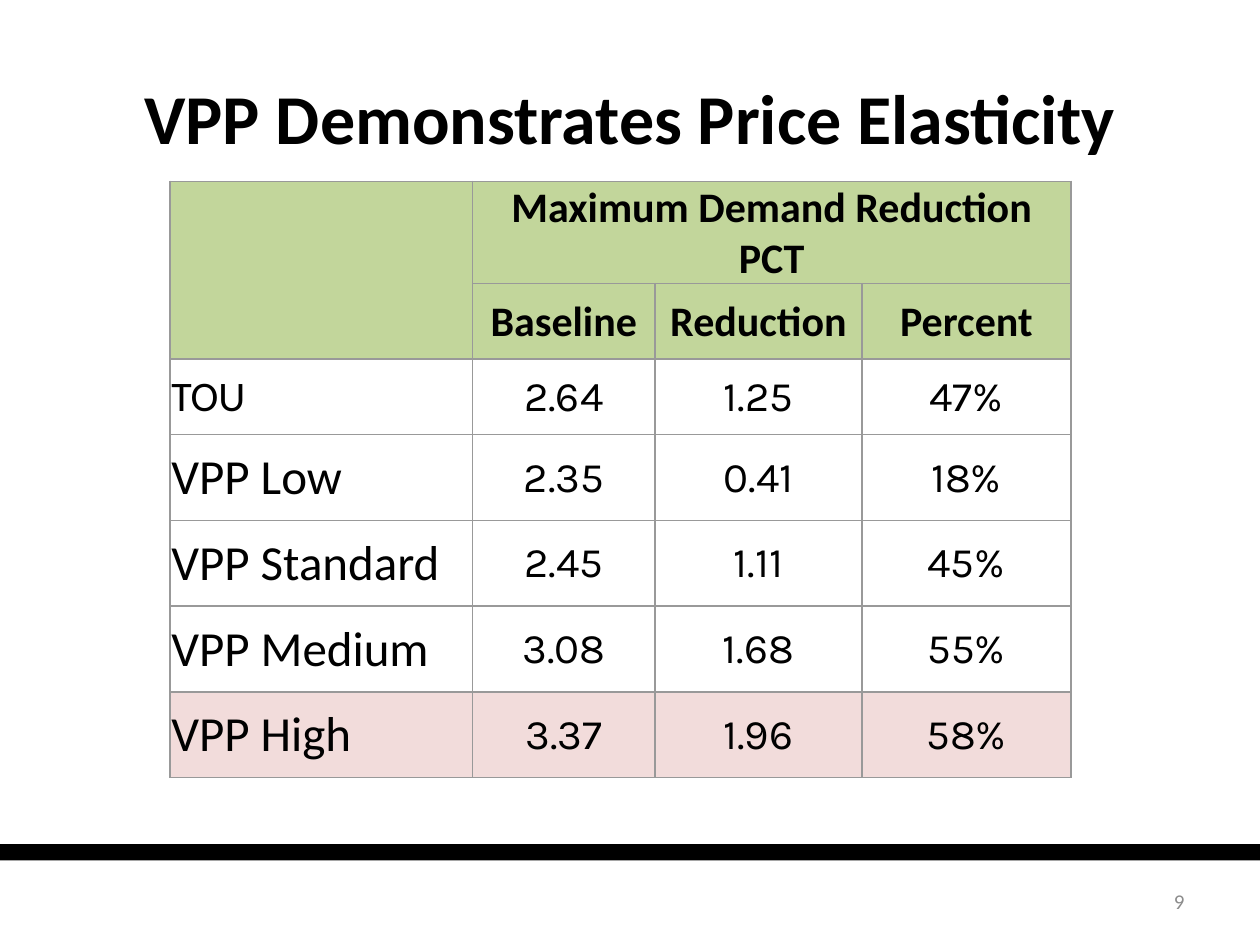
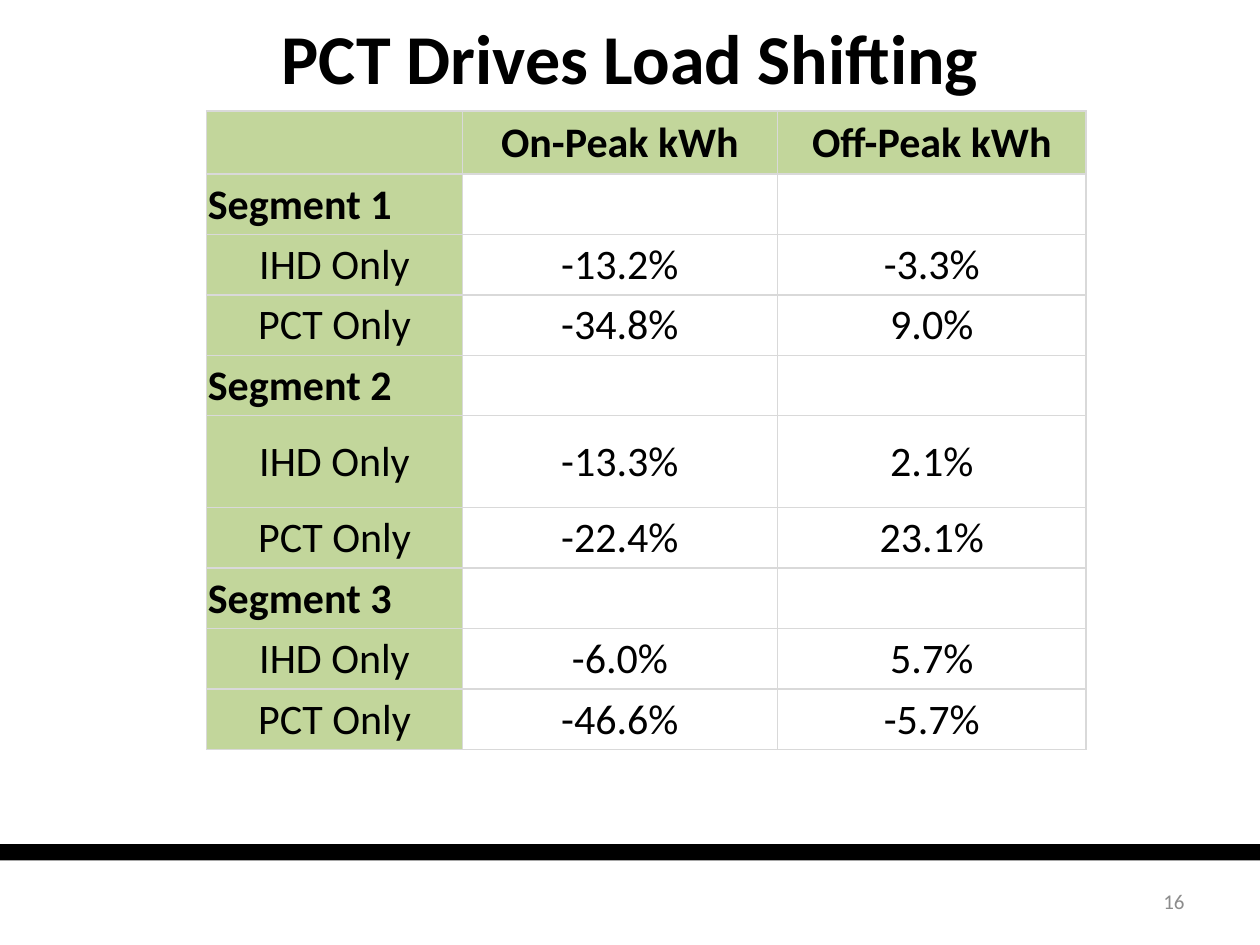
from lxml import etree
from pptx import Presentation
from pptx.dml.color import RGBColor
from pptx.enum.shapes import MSO_SHAPE
from pptx.enum.text import MSO_ANCHOR, PP_ALIGN
from pptx.oxml.ns import qn
from pptx.util import Inches, Pt

LEFT, CENTER, RIGHT = PP_ALIGN.LEFT, PP_ALIGN.CENTER, PP_ALIGN.RIGHT
MIDDLE = MSO_ANCHOR.MIDDLE
RECTANGLE = MSO_SHAPE.RECTANGLE

COLORS = {
    "black": "000000",
    "page_number": "8C8C8C",
    "header": "C2D69B",
    "highlight": "F2DCDB",
    "elasticity_grid": "999999",
    "shifting_grid": "D9D9D9",
}
BODY_FONT, NUMBER_FONT = "Calibri", "Karla"


def write_text(frame, text, size, align, color="black", bold=False, font=BODY_FONT):
    frame.text = text
    frame.word_wrap = True
    for paragraph in frame.paragraphs:
        paragraph.alignment = align
        paragraph.font.size = Pt(size)
        for run in paragraph.runs:
            run.font.name = font
            run.font.size = Pt(size)
            run.font.bold = bold
            run.font.color.rgb = RGBColor.from_string(COLORS[color])


def style_cell(cell, fill, grid):
    cell.vertical_anchor = MIDDLE
    cell.margin_left = cell.margin_right = cell.margin_top = Inches(0.01)
    cell.margin_bottom = 0
    if fill:
        cell.fill.solid()
        cell.fill.fore_color.rgb = RGBColor.from_string(COLORS[fill])
    else:
        cell.fill.background()
    # Borders come before the fill in the cell properties
    properties = cell._tc.get_or_add_tcPr()
    for index, side in enumerate(("a:lnL", "a:lnR", "a:lnT", "a:lnB")):
        line = etree.Element(qn(side), w=str(Pt(1)))
        solid = etree.SubElement(line, qn("a:solidFill"))
        etree.SubElement(solid, qn("a:srgbClr"), val=COLORS[grid])
        properties.insert(index, line)


presentation = Presentation()
presentation.slide_width = Inches(10)
presentation.slide_height = Inches(7.5)

# Contents of the two slides
pages = [
    {
        "title": "VPP Demonstrates Price Elasticity",
        "title_top": 0.3, "title_height": 1.25, "number": "9",
        "left": 1.35, "top": 1.44, "grid": "elasticity_grid",
        "widths": [2.4, 1.45, 1.64, 1.66],
        "heights": [0.6] * 3 + [0.68] * 4,
        "header_rows": 2, "header_columns": 0, "number_font": NUMBER_FONT,
        "merges": [(0, 0, 1, 0), (0, 1, 0, 3)],
        "rows": [
            ["", "Maximum Demand Reduction\nPCT", "", ""],
            ["", "Baseline", "Reduction", "Percent"],
            ["TOU", "2.64", "1.25", "47%"],
            ["VPP Low", "2.35", "0.41", "18%"],
            ["VPP Standard", "2.45", "1.11", "45%"],
            ["VPP Medium", "3.08", "1.68", "55%"],
            ["VPP High", "3.37", "1.96", "58%"],
        ],
    },
    {
        "title": "PCT Drives Load Shifting",
        "title_top": 0.01, "title_height": 0.87, "number": "16",
        "left": 1.64, "top": 0.88, "grid": "shifting_grid",
        "widths": [2.03, 2.5, 2.45],
        "heights": [0.5] + [0.48] * 4 + [0.73] + [0.48] * 4,
        "header_rows": 1, "header_columns": 1, "number_font": BODY_FONT,
        "merges": [],
        "rows": [
            ["", "On-Peak kWh", "Off-Peak kWh"],
            ["Segment 1", "", ""],
            ["IHD Only", "-13.2%", "-3.3%"],
            ["PCT Only", "-34.8%", "9.0%"],
            ["Segment 2", "", ""],
            ["IHD Only", "-13.3%", "2.1%"],
            ["PCT Only", "-22.4%", "23.1%"],
            ["Segment 3", "", ""],
            ["IHD Only", "-6.0%", "5.7%"],
            ["PCT Only", "-46.6%", "-5.7%"],
        ],
    },
]

for page in pages:
    slide = presentation.slides.add_slide(presentation.slide_layouts[6])

    # Bottom band
    band = slide.shapes.add_shape(
        RECTANGLE, Inches(-0.03), Inches(6.7), Inches(10.04), Inches(0.13))
    band.shadow.inherit = False
    band.fill.solid()
    band.fill.fore_color.rgb = RGBColor.from_string(COLORS["black"])
    band.line.fill.background()

    # Title and page number
    title = slide.shapes.add_textbox(
        Inches(0.5), Inches(page["title_top"]), Inches(9), Inches(page["title_height"]))
    write_text(title.text_frame, page["title"], 40, CENTER, bold=True)
    page_number = slide.shapes.add_textbox(
        Inches(7.17), Inches(6.95), Inches(2.33), Inches(0.4))
    write_text(page_number.text_frame, page["number"], 12, RIGHT, "page_number")
    for box in (title, page_number):
        box.text_frame.vertical_anchor = MIDDLE

    # Table frame
    rows, widths, heights = page["rows"], page["widths"], page["heights"]
    table = slide.shapes.add_table(
        len(rows), len(widths), Inches(page["left"]), Inches(page["top"]),
        Inches(sum(widths)), Inches(sum(heights))).table
    table.first_row = table.horz_banding = False
    for column, width in zip(table.columns, widths):
        column.width = Inches(width)
    for row, height in zip(table.rows, heights):
        row.height = Inches(height)
    for top, left, bottom, right in page["merges"]:
        table.cell(top, left).merge(table.cell(bottom, right))

    # Table cells
    for row_index, values in enumerate(rows):
        for column_index, text in enumerate(values):
            in_header = row_index < page["header_rows"]
            is_segment = text.startswith("Segment")
            is_plan = text.startswith("VPP")
            is_number = not in_header and column_index > 0
            fill = None
            if in_header or column_index < page["header_columns"]:
                fill = "header"
            elif values[0] == "VPP High":
                fill = "highlight"
            cell = table.cell(row_index, column_index)
            write_text(
                cell.text_frame, text, 28 if is_plan else 24,
                LEFT if is_segment or is_plan or text == "TOU" else CENTER,
                bold=in_header or is_segment,
                font=page["number_font"] if is_number else BODY_FONT)
            style_cell(cell, fill, page["grid"])

presentation.save("out.pptx")
